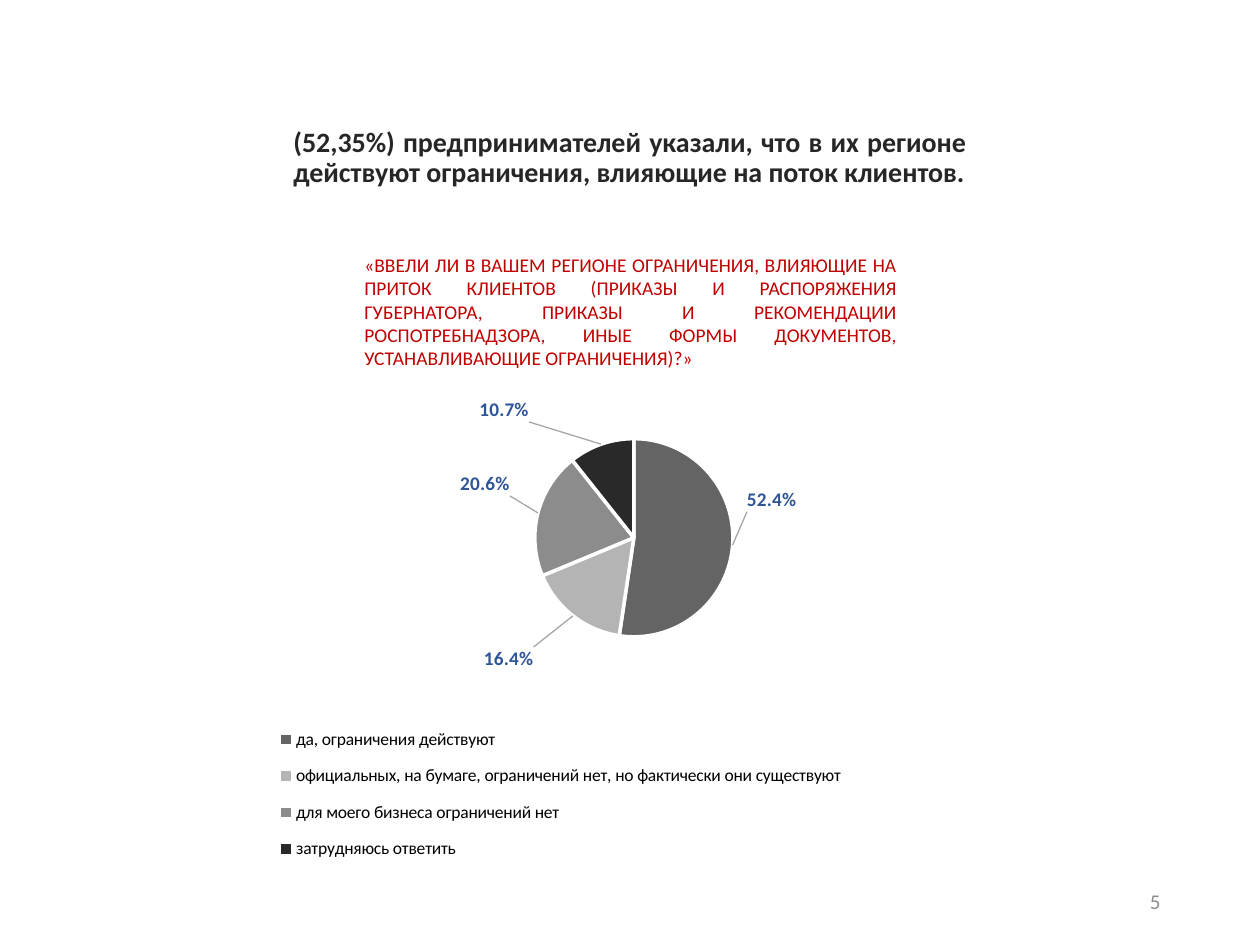
from lxml.etree import SubElement
from pptx import Presentation
from pptx.chart.data import CategoryChartData
from pptx.dml.color import RGBColor
from pptx.enum.chart import XL_CHART_TYPE, XL_LABEL_POSITION, XL_LEGEND_POSITION
from pptx.enum.text import MSO_ANCHOR, PP_ALIGN
from pptx.oxml.ns import qn
from pptx.util import Emu, Pt

SCALE = 914400 / 126
FONT = "Calibri"
COLORS = {
    "title": "262626", "question": "C00000", "number": "8C8C8C",
    "legend": "000000", "label": "2F5597", "gap": "FFFFFF", "leader": "A6A6A6",
}
ANSWERS = [
    ("да, ограничения действуют", 0.524, "646464", (0.01, -0.09)),
    ("официальных, на бумаге, ограничений нет, но фактически они существуют",
     0.164, "B4B4B4", (-0.05, 0.05)),
    ("для моего бизнеса ограничений нет", 0.206, "8C8C8C", (-0.03, -0.03)),
    ("затрудняюсь ответить", 0.107, "292929", (-0.1, -0.03)),
]


def px(n):
    return Emu(round(n * SCALE))


def rgb(name):
    return RGBColor.from_string(COLORS.get(name, name))


class Deck:
    """Holds the slide style and the slide being built."""

    def __init__(self, width, height):
        self.prs = Presentation()
        self.prs.slide_width, self.prs.slide_height = px(width), px(height)
        self.s = self.prs.slides.add_slide(self.prs.slide_layouts[6])

    def style(self, font, size, color, bold=False):
        font.name, font.size, font.bold = FONT, Pt(size), bold
        font.color.rgb = rgb(color)

    def text(self, box, text, size, color, align, anchor=MSO_ANCHOR.TOP,
             bold=False, spacing=None):
        tf = self.s.shapes.add_textbox(*map(px, box)).text_frame
        tf.word_wrap, tf.vertical_anchor = True, anchor
        p = tf.paragraphs[0]
        p.alignment, p.line_spacing = align, spacing
        r = p.add_run()
        r.text = text
        self.style(r.font, size, color, bold)

    def layout(self, parent, index, **values):
        for old in parent.findall(qn("c:layout")):
            parent.remove(old)
        layout = SubElement(parent, qn("c:layout"))
        parent.insert(index, layout)
        manual = SubElement(layout, qn("c:manualLayout"))
        for tag, value in values.items():
            SubElement(manual, qn(f"c:{tag}")).set("val", str(value))

    def pie(self, box, answers):
        data = CategoryChartData(number_format="0.0%")
        data.categories = [a[0] for a in answers]
        data.add_series("Series 1", [a[1] for a in answers])
        chart = self.s.shapes.add_chart(XL_CHART_TYPE.PIE, *map(px, box), data).chart
        chart.has_title = False
        self.style(chart.font, 10, "legend")
        chart.has_legend = True
        legend = chart.legend
        legend.position, legend.include_in_layout = XL_LEGEND_POSITION.BOTTOM, False
        self.style(legend.font, 10, "legend")
        self.layout(legend._element, 1, xMode="edge", yMode="edge",
                    x=0.03, y=0.63, w=0.85, h=0.32)
        plot = chart.plots[0]
        plot.vary_by_categories = True
        self.layout(chart._chartSpace.chart.plotArea, 0, layoutTarget="inner",
                    xMode="edge", yMode="edge", x=0.2, y=0.09, w=0.72, h=0.39)
        self.slices(plot.series[0], answers)

    def slices(self, series, answers):
        labels = series.data_labels
        labels.show_value = True
        labels.number_format, labels.number_format_is_linked = "0.0%", False
        labels.position = XL_LABEL_POSITION.OUTSIDE_END
        self.style(labels.font, 11, "label", True)
        for i, (_, _, color, (dx, dy)) in enumerate(answers):
            point = series.points[i]
            point.format.fill.solid()
            point.format.fill.fore_color.rgb = rgb(color)
            point.format.line.color.rgb = rgb("gap")
            point.format.line.width = Pt(2)
            label = point.data_label
            label.position = XL_LABEL_POSITION.OUTSIDE_END
            self.style(label.font, 11, "label", True)
            self.layout(labels._element.findall(qn("c:dLbl"))[i], 1, x=dx, y=dy)
        self.leaders(labels._element)

    def leaders(self, labels):
        for old in labels.findall(qn("c:showLeaderLines")):
            labels.remove(old)
        SubElement(labels, qn("c:showLeaderLines")).set("val", "1")
        props = SubElement(SubElement(labels, qn("c:leaderLines")), qn("c:spPr"))
        line = SubElement(props, qn("a:ln"), w=str(Pt(0.75)))
        fill = SubElement(line, qn("a:solidFill"))
        SubElement(fill, qn("a:srgbClr"), val=COLORS["leader"])


def main():
    deck = Deck(1260, 945)
    deck.text((281, 82, 698, 113),
              "(52,35%) предпринимателей указали, что в их регионе действуют "
              "ограничения, влияющие на поток клиентов.",
              16, "title", PP_ALIGN.JUSTIFY, MSO_ANCHOR.BOTTOM, True, 0.9)
    deck.pie((243, 393, 698, 508), ANSWERS)
    deck.text((890, 876, 283, 50), "5", 12, "number", PP_ALIGN.RIGHT, MSO_ANCHOR.MIDDLE)
    deck.text((352, 247, 557, 105),
              "«ВВЕЛИ ЛИ В ВАШЕМ РЕГИОНЕ ОГРАНИЧЕНИЯ, ВЛИЯЮЩИЕ НА ПРИТОК КЛИЕНТОВ "
              "(ПРИКАЗЫ И РАСПОРЯЖЕНИЯ ГУБЕРНАТОРА, ПРИКАЗЫ И РЕКОМЕНДАЦИИ "
              "РОСПОТРЕБНАДЗОРА, ИНЫЕ ФОРМЫ ДОКУМЕНТОВ, УСТАНАВЛИВАЮЩИЕ ОГРАНИЧЕНИЯ)?»",
              11.1, "question", PP_ALIGN.JUSTIFY)
    deck.prs.save("out.pptx")


if __name__ == "__main__":
    main()
